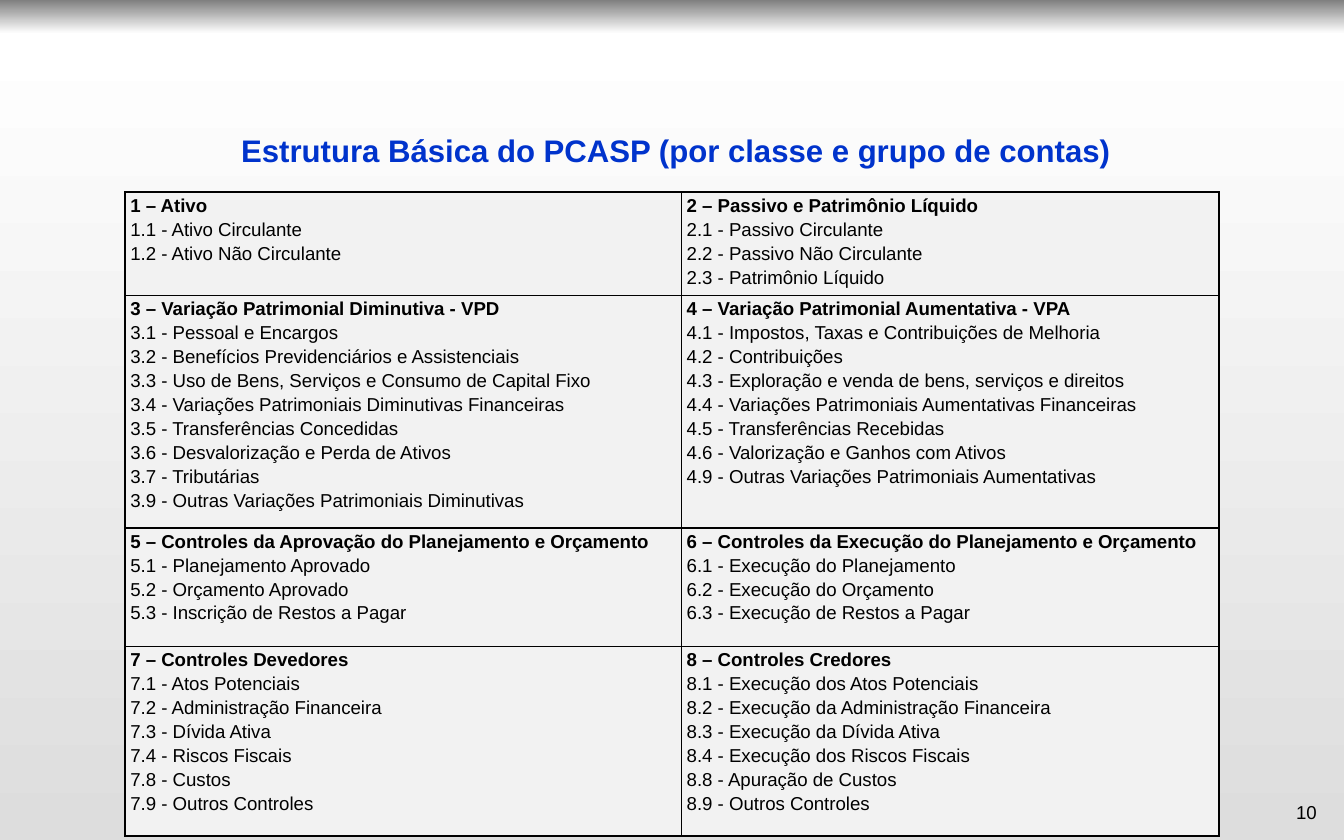
from lxml import etree
from pptx import Presentation
from pptx.dml.color import RGBColor
from pptx.enum.text import MSO_ANCHOR as ANCHOR, PP_ALIGN as ALIGN
from pptx.oxml.ns import qn
from pptx.util import Inches, Pt

FONT = "Arial"
COLORS = {"title": "0033CC", "text": "000000", "border": "000000",
          "cell": "F2F2F2"}
BACKGROUND = [(0, "808080"), (4, "FFFFFF"), (100, "DDDDDD")]
COL_WIDTHS = [4.14, 4]
ROW_HEIGHTS = [0.77, 1.73, 0.88, 1.41]
# Each class: heading, its groups, space after the last group in points
CLASSES = [
    [("1 – Ativo", ["1.1 - Ativo Circulante", "1.2 - Ativo Não Circulante"], 10),
     ("2 – Passivo e Patrimônio Líquido",
      ["2.1 - Passivo Circulante", "2.2 - Passivo Não Circulante",
       "2.3 - Patrimônio Líquido"], 10)],
    [("3 – Variação Patrimonial Diminutiva - VPD",
      ["3.1 - Pessoal e Encargos",
       "3.2 - Benefícios Previdenciários e Assistenciais",
       "3.3 - Uso de Bens, Serviços e Consumo de Capital Fixo",
       "3.4 - Variações Patrimoniais Diminutivas Financeiras",
       "3.5 - Transferências Concedidas",
       "3.6 - Desvalorização e Perda de Ativos",
       "3.7 - Tributárias",
       "3.9 - Outras Variações Patrimoniais Diminutivas"], 0),
     ("4 – Variação Patrimonial Aumentativa - VPA",
      ["4.1 - Impostos, Taxas e Contribuições de Melhoria",
       "4.2 - Contribuições",
       "4.3 - Exploração e venda de bens, serviços e direitos",
       "4.4 - Variações Patrimoniais Aumentativas Financeiras",
       "4.5 - Transferências Recebidas",
       "4.6 - Valorização e Ganhos com Ativos",
       "4.9 - Outras Variações Patrimoniais Aumentativas"], 0)],
    [("5 – Controles da Aprovação do Planejamento e Orçamento",
      ["5.1 - Planejamento Aprovado", "5.2 - Orçamento Aprovado",
       "5.3 - Inscrição de Restos a Pagar"], 10),
     ("6 – Controles da Execução do Planejamento e Orçamento",
      ["6.1 - Execução do Planejamento", "6.2 - Execução do Orçamento",
       "6.3 - Execução de Restos a Pagar"], 10)],
    [("7 – Controles Devedores",
      ["7.1 - Atos Potenciais", "7.2 - Administração Financeira",
       "7.3 - Dívida Ativa", "7.4 - Riscos Fiscais", "7.8 - Custos",
       "7.9 - Outros Controles"], 10),
     ("8 – Controles Credores",
      ["8.1 - Execução dos Atos Potenciais",
       "8.2 - Execução da Administração Financeira",
       "8.3 - Execução da Dívida Ativa", "8.4 - Execução dos Riscos Fiscais",
       "8.8 - Apuração de Custos", "8.9 - Outros Controles"], 10)],
]


def rgb(name):
    return RGBColor.from_string(COLORS[name])


def add_run(p, text, size, color="text", bold=False):
    r = p.add_run()
    r.text = text
    r.font.name = FONT
    r.font.size = Pt(size)
    r.font.bold = bold
    r.font.color.rgb = rgb(color)


def set_background(s):
    fill = s.background.fill
    fill.gradient()
    fill.gradient_angle = 270
    stops = s.background._cSld.find(".//" + qn("a:gsLst"))
    for stop in list(stops):
        stops.remove(stop)
    for percent, color in BACKGROUND:
        stop = etree.SubElement(stops, qn("a:gs"), pos=str(percent * 1000))
        etree.SubElement(stop, qn("a:srgbClr"), val=color)


def add_label(s, box, text, size, color="text", bold=False, inset=None,
              anchor=ANCHOR.TOP, wrap=True):
    """Add one centred line of text in box."""
    tf = s.shapes.add_textbox(*map(Inches, box)).text_frame
    tf.word_wrap = wrap
    tf.vertical_anchor = anchor
    if inset is not None:
        tf.margin_left = tf.margin_right = Inches(inset)
        tf.margin_top = tf.margin_bottom = Inches(inset)
    p = tf.paragraphs[0]
    p.alignment = ALIGN.CENTER
    add_run(p, text, size, color, bold)


def set_borders(cell):
    tc_pr = cell._tc.get_or_add_tcPr()
    for side in ("lnL", "lnR", "lnT", "lnB"):
        ln = etree.SubElement(tc_pr, qn("a:" + side), w=str(Pt(1)))
        fill = etree.SubElement(ln, qn("a:solidFill"))
        etree.SubElement(fill, qn("a:srgbClr"), val=COLORS["border"])


def fill_cell(cell, heading, groups, space_after):
    set_borders(cell)
    cell.fill.solid()
    cell.fill.fore_color.rgb = rgb("cell")
    cell.margin_left = cell.margin_right = Inches(0.04)
    cell.margin_top = cell.margin_bottom = 0
    tf = cell.text_frame
    for i, line in enumerate([heading, *groups]):
        p = tf.add_paragraph() if i else tf.paragraphs[0]
        p.line_spacing = 1.15
        add_run(p, line, 10, bold=i == 0)
    p.space_after = Pt(space_after)


def add_accounts_table(s, box):
    table = s.shapes.add_table(len(ROW_HEIGHTS), len(COL_WIDTHS),
                               *map(Inches, box)).table
    table.first_row = table.horz_banding = False
    for col, width in zip(table.columns, COL_WIDTHS):
        col.width = Inches(width)
    for row, height, classes in zip(table.rows, ROW_HEIGHTS, CLASSES):
        row.height = Inches(height)
        for cell, account_class in zip(row.cells, classes):
            fill_cell(cell, *account_class)


def main():
    prs = Presentation()
    prs.slide_width, prs.slide_height = Inches(10), Inches(6.25)
    s = prs.slides.add_slide(prs.slide_layouts[6])
    set_background(s)
    add_label(s, (9.61, 5.96, 0.22, 0.17), "10", 10, inset=0, wrap=False)
    add_label(s, (1.52, 0.93, 7.02, 0.38),
              "Estrutura Básica do PCASP (por classe e grupo de contas)",
              16.7, "title", bold=True, anchor=ANCHOR.MIDDLE)
    add_accounts_table(s, (0.93, 1.43, sum(COL_WIDTHS), sum(ROW_HEIGHTS)))
    prs.save("out.pptx")


if __name__ == "__main__":
    main()
